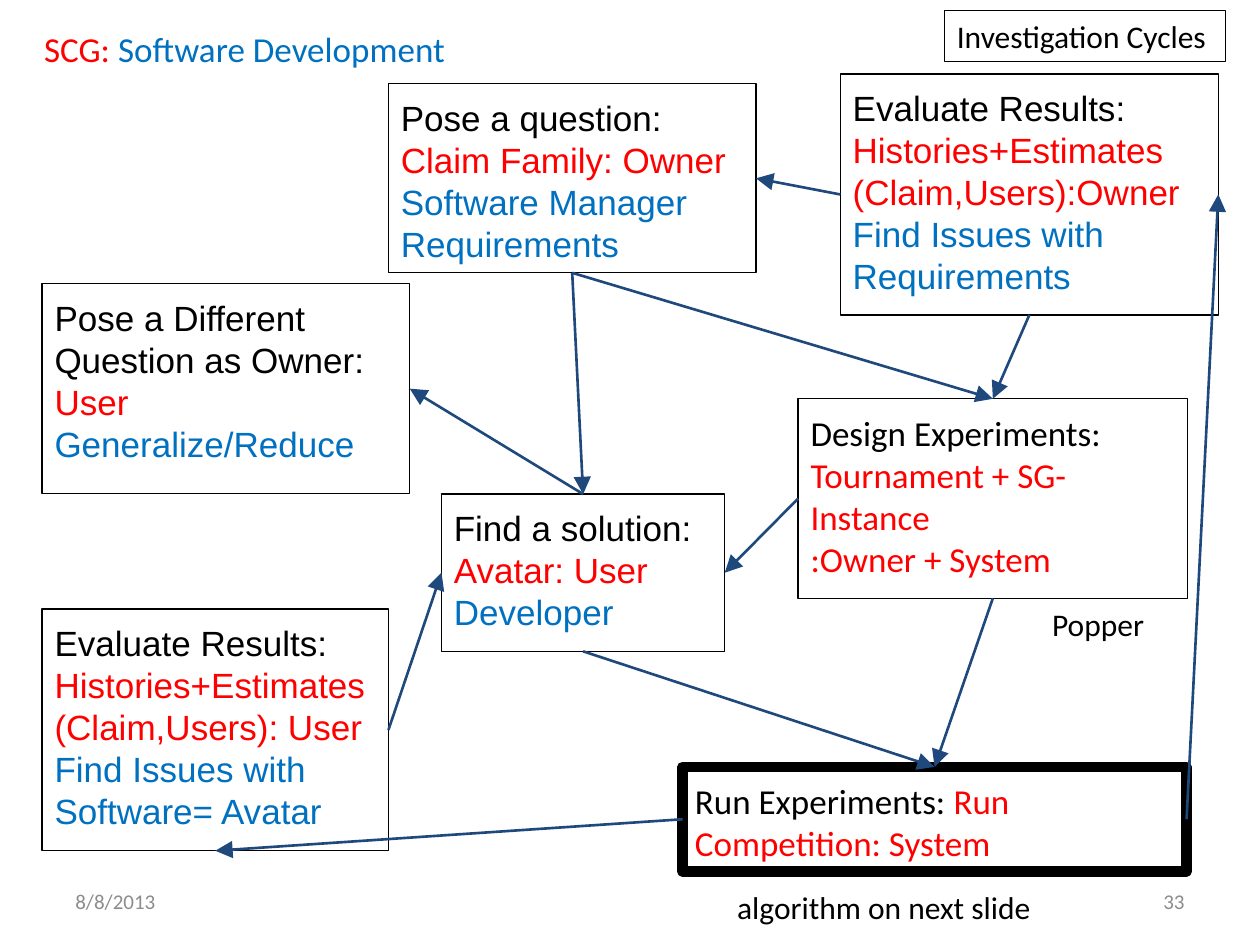
from lxml import etree
from pptx import Presentation
from pptx.dml.color import RGBColor
from pptx.enum.shapes import MSO_CONNECTOR, MSO_SHAPE
from pptx.enum.text import MSO_ANCHOR, MSO_AUTO_SIZE, PP_ALIGN
from pptx.oxml.ns import qn
from pptx.util import Cm, Pt

RECT = MSO_SHAPE.RECTANGLE
STRAIGHT = MSO_CONNECTOR.STRAIGHT
ANCHOR_TOP, ANCHOR_MID = MSO_ANCHOR.TOP, MSO_ANCHOR.MIDDLE
LEFT_AL, RIGHT_AL = PP_ALIGN.LEFT, PP_ALIGN.RIGHT
NO_FIT = MSO_AUTO_SIZE.NONE
TOP, LEFT, BOTTOM, RIGHT = range(4)

COLORS = {
    "black": "000000",
    "red": "FF0000",
    "blue": "0070C0",
    "navy": "1F497D",
    "gray": "8C8C8C",
}


def color(name):
    return RGBColor.from_string(COLORS[name])


def write(para, text, font="Calibri", size=20, tint="black"):
    run = para.add_run()
    run.text = text
    run.font.name = font
    run.font.size = Pt(size)
    run.font.color.rgb = color(tint)


class Board:
    def __init__(self, slide):
        self.slide = slide
        self.shapes = slide.shapes

    def fill(self, shape, rows, font="Calibri", size=20, inset=0.13,
             align=LEFT_AL, anchor=ANCHOR_TOP, wrap=True):
        frame = shape.text_frame
        frame.auto_size = NO_FIT
        frame.word_wrap = wrap
        frame.vertical_anchor = anchor
        frame.margin_left = frame.margin_right = Cm(0.25)
        frame.margin_top = frame.margin_bottom = Cm(inset)
        for index, row in enumerate(rows):
            para = frame.add_paragraph() if index else frame.paragraphs[0]
            para.alignment = align
            for text, tint in row:
                write(para, text, font=font, size=size, tint=tint)

    def title(self, place, rows):
        shape = self.shapes.title
        shape.left, shape.top, shape.width, shape.height = map(Cm, place)
        self.fill(shape, rows, wrap=False)

    def label(self, place, text, tint="black", **style):
        shape = self.shapes.add_textbox(*map(Cm, place))
        self.fill(shape, [[(text, tint)]], **style)

    def box(self, place, rows, line=0.75, **style):
        shape = self.shapes.add_shape(RECT, *map(Cm, place))
        shape.shadow.inherit = False
        shape.fill.background()
        shape.line.color.rgb = color("black")
        shape.line.width = Pt(line)
        self.fill(shape, rows, **style)
        return shape

    def arrow(self, start, out, end, into):
        link = self.shapes.add_connector(STRAIGHT, 0, 0, 0, 0)
        link.begin_connect(start, out)
        link.end_connect(end, into)
        link.line.color.rgb = color("navy")
        link.line.width = Pt(1.5)
        props = link.element.spPr
        etree.SubElement(props.find(qn("a:ln")), qn("a:tailEnd"),
                         type="triangle", w="lg", len="lg")
        etree.SubElement(props, qn("a:effectLst"))


STEPS = {
    "pose": ((7.83, 1.69, 7.41, 3.81), "Arial", 0.75, [
        [("Pose a question: ", "black"), ("Claim Family: Owner", "red")],
        [("Software Manager", "blue")],
        [("Requirements", "blue")]]),
    "design": ((16.09, 8.04, 7.85, 4.02), "Calibri", 0.75, [
        [("Design Experiments:", "black")],
        [("Tournament + SG-Instance", "red")],
        [(":Owner + System", "red")]]),
    "solve": ((8.9, 9.96, 5.71, 3.17), "Arial", 0.75, [
        [("Find a solution:", "black")],
        [("Avatar: User", "red")],
        [("Developer", "blue")]]),
    "user": ((0.85, 12.28, 6.98, 4.87), "Arial", 0.75, [
        [("Evaluate Results: ", "black"),
         ("Histories+Estimates (Claim,Users): User", "red")],
        [("Find Issues with Software= Avatar", "blue")]]),
    "run": ((13.76, 15.46, 10.16, 2.11), "Calibri", 6, [
        [("Run Experiments: ", "black"), ("Run Competition: System", "red")]]),
    "owner": ((16.94, 1.49, 7.62, 4.86), "Arial", 0.75, [
        [("Evaluate Results: ", "black"),
         ("Histories+Estimates (Claim,Users):Owner", "red")],
        [("Find Issues with Requirements", "blue")]]),
    "differ": ((0.85, 5.72, 7.41, 4.23), "Arial", 0.75, [
        [("Pose a Different Question as Owner:", "black")],
        [("User", "red")],
        [("Generalize/Reduce", "blue")]]),
}

ARROWS = [
    ("pose", BOTTOM, "design", TOP),
    ("pose", BOTTOM, "solve", TOP),
    ("owner", LEFT, "pose", RIGHT),
    ("design", BOTTOM, "run", TOP),
    ("solve", BOTTOM, "run", TOP),
    ("run", LEFT, "user", BOTTOM),
    ("run", RIGHT, "owner", RIGHT),
    ("user", RIGHT, "solve", LEFT),
    ("owner", BOTTOM, "design", TOP),
    ("solve", TOP, "differ", RIGHT),
    ("design", LEFT, "solve", RIGHT),
]


def main():
    deck = Presentation()
    deck.slide_width, deck.slide_height = Cm(25.4), Cm(19.05)
    board = Board(deck.slides.add_slide(deck.slide_layouts[5]))

    board.title((0.64, 0.43, 8.69, 1.11),
                [[("SCG: ", "red"), ("Software Development", "blue")]])
    boxes = {name: board.box(place, rows, line=line, font=font, inset=0.25)
             for name, (place, font, line, rows) in STEPS.items()}
    for start, out, end, into in ARROWS:
        board.arrow(boxes[start], out, boxes[end], into)

    board.label((20.96, 12.06, 2.41, 1.04), "Popper", size=18, wrap=False)
    board.label((14.61, 17.78, 6.58, 1.04), "algorithm on next slide",
                size=18, wrap=False)
    board.box((19.04, 0.21, 5.67, 1.03), [[("Investigation Cycles", "black")]],
              size=18, wrap=False)
    for left, text, align in ((1.27, "8/8/2013", LEFT_AL), (18.2, "33", RIGHT_AL)):
        board.label((left, 17.66, 5.93, 1.01), text, tint="gray", size=12,
                    align=align, anchor=ANCHOR_MID)

    deck.save("out.pptx")


if __name__ == "__main__":
    main()
